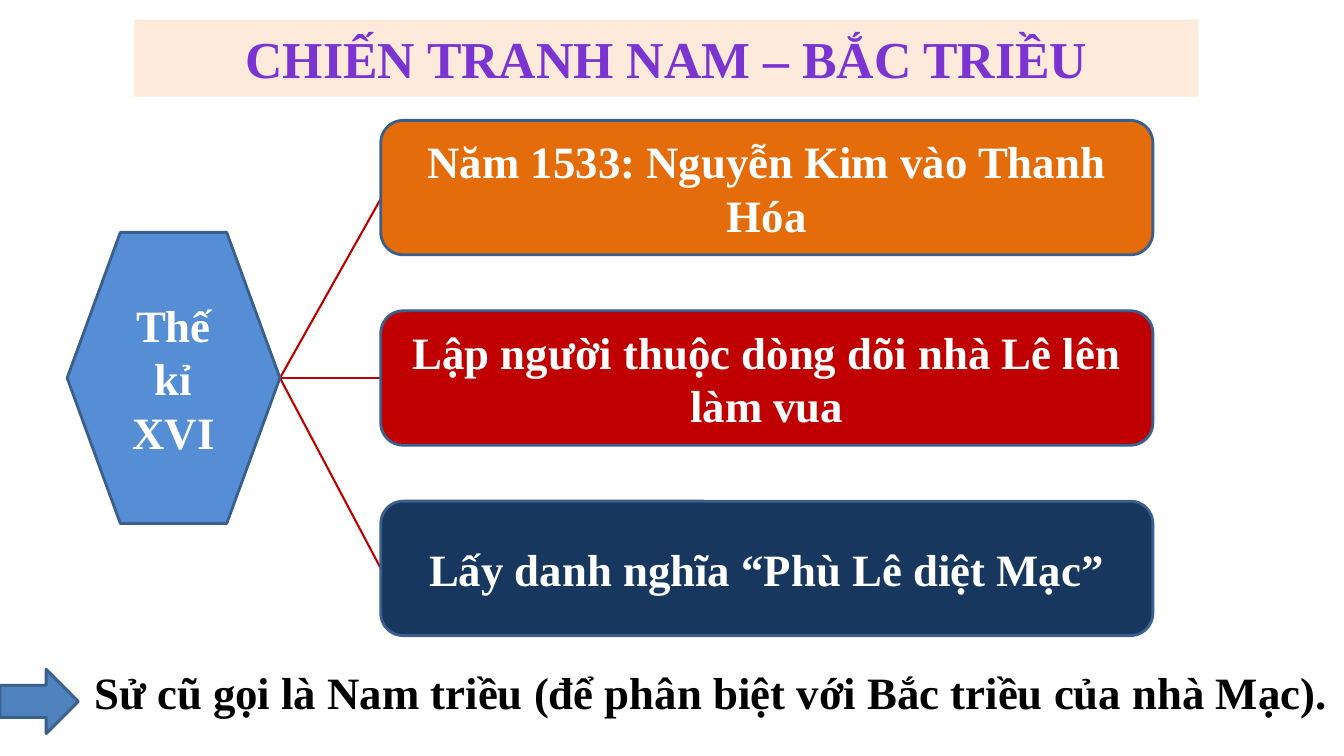
import pptx
import pptx.util
import pptx.dml.color
import pptx.enum.shapes
import pptx.enum.text
import pptx.oxml

Pt = pptx.util.Pt
Shape = pptx.enum.shapes.MSO_SHAPE
Anchor = pptx.enum.text.MSO_ANCHOR
Size = pptx.enum.text.MSO_AUTO_SIZE

colors = {
    "title": "7B34D2", "band": "FDEADA", "hex": "558ED5", "edge": "3A5F8C",
    "orange": "E46C0A", "red": "C00000", "navy": "17375E", "arrow": "4F81BD",
    "white": "FFFFFF", "black": "000000",
}


def tint(name):
    return pptx.dml.color.RGBColor.from_string(colors[name])


def write(shape, words, color, size=32, anchor=Anchor.MIDDLE):
    frame = shape.text_frame
    frame.word_wrap = True
    frame.auto_size = Size.NONE
    frame.vertical_anchor = anchor
    frame.margin_left = frame.margin_right = Pt(9.6)
    frame.margin_top = frame.margin_bottom = Pt(4.8)
    para = frame.paragraphs[0]
    para.alignment = pptx.enum.text.PP_ALIGN.CENTER
    run = para.add_run()
    run.text = words
    run.font.name = "Times New Roman"
    run.font.size = Pt(size)
    run.font.bold = True
    run.font.color.rgb = tint(color)


deck = pptx.Presentation()
deck.slide_width = Pt(960)
deck.slide_height = Pt(540)
slide = deck.slides.add_slide(deck.slide_layouts[6])
shapes = slide.shapes

middle = 270
left = 272
events = [
    ("Năm 1533: Nguyễn Kim vào Thanh Hóa", "orange", 142),
    ("Lập người thuộc dòng dõi nhà Lê lên làm vua", "red", middle),
    ("Lấy danh nghĩa “Phù Lê diệt Mạc”", "navy", 406),
]

for words, fill, end in events:
    link = shapes.add_connector(
        pptx.enum.shapes.MSO_CONNECTOR.STRAIGHT,
        Pt(200), Pt(middle), Pt(left), Pt(end))
    link.line.color.rgb = tint("red")
    link.line.width = Pt(1.5)
    props = link._element.spPr
    props.append(pptx.oxml.parse_xml(
        '<a:effectLst xmlns:a="http://schemas.openxmlformats.org/drawingml/2006/main"/>'))

blocks = [
    (Shape.HEXAGON, 48, 166, 152, 208, "hex", "Thế kỉ XVI"),
    (Shape.RIGHT_ARROW, 0, 478, 56, 46, "arrow", ""),
]
for row, (words, fill, end) in enumerate(events):
    blocks.append((Shape.ROUNDED_RECTANGLE, left, 86 + 136 * row, 551.5, 96, fill, words))

for kind, x, y, width, height, fill, words in blocks:
    block = shapes.add_shape(kind, Pt(x), Pt(y), Pt(width), Pt(height))
    block.shadow.inherit = False
    block.fill.solid()
    block.fill.fore_color.rgb = tint(fill)
    block.line.color.rgb = tint("edge")
    block.line.width = Pt(2)
    if words:
        write(block, words, "white")

note = shapes.add_textbox(Pt(56), Pt(470), Pt(904), Pt(48))
write(note, "Sử cũ gọi là Nam triều (để phân biệt với Bắc triều của nhà Mạc).",
      "black", anchor=Anchor.TOP)

title = shapes.add_textbox(Pt(96), Pt(14), Pt(760), Pt(55))
title.fill.solid()
title.fill.fore_color.rgb = tint("band")
write(title, "CHIẾN TRANH NAM – BẮC TRIỀU", "title", 37, Anchor.TOP)

deck.save("out.pptx")
